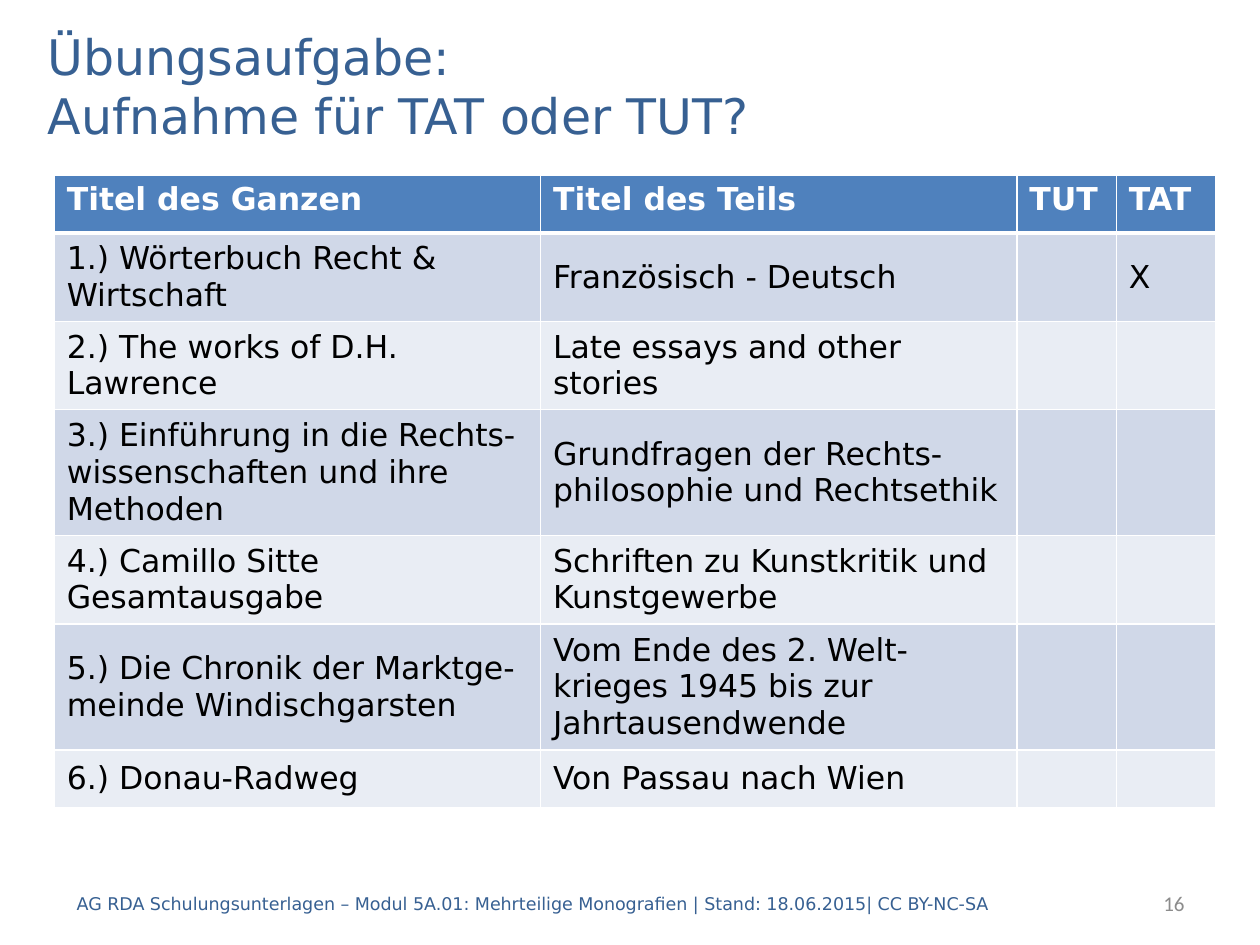
from lxml.etree import SubElement
from pptx import Presentation
from pptx.dml.color import RGBColor
from pptx.enum.text import MSO_ANCHOR, PP_ALIGN
from pptx.oxml.ns import qn
from pptx.util import Inches, Pt

FONT = "DejaVu Sans"
COLORS = {
    "title": "376092", "number": "8C8C8C", "header": "4F81BD", "odd": "D0D8E8",
    "even": "E9EDF4", "text": "000000", "white": "FFFFFF",
}
TITLE = ["Übungsaufgabe:", "Aufnahme für TAT oder TUT?"]
ROWS = [
    ("Titel des Ganzen", "Titel des Teils", "TUT", "TAT"),
    ("1.) Wörterbuch Recht & Wirtschaft", "Französisch - Deutsch", "", "X"),
    ("2.) The works of D.H. Lawrence", "Late essays and other stories", "", ""),
    ("3.) Einführung in die Rechts-wissenschaften und ihre Methoden",
     "Grundfragen der Rechts-philosophie und Rechtsethik", "", ""),
    ("4.) Camillo Sitte Gesamtausgabe", "Schriften zu Kunstkritik und Kunstgewerbe", "", ""),
    ("5.) Die Chronik der Marktge-meinde Windischgarsten",
     "Vom Ende des 2. Welt-krieges 1945 bis zur Jahrtausendwende", "", ""),
    ("6.) Donau-Radweg", "Von Passau nach Wien", "", ""),
]
COL_WIDTHS = [3.86, 3.78, 0.79, 0.79]
ROW_HEIGHTS = [0.46, 0.49, 0.39, 0.47, 0.39, 0.46, 0.46]
FOOTER = ("AG RDA Schulungsunterlagen – Modul 5A.01: Mehrteilige Monografien"
          " | Stand: 18.06.2015| CC BY-NC-SA")
FOOTER_TOP, FOOTER_HEIGHT = 6.97, 0.4


def write(tf, *lines, size=18, color="text", font=FONT, bold=False,
          align=PP_ALIGN.LEFT, space=0):
    """Fill the first paragraph, with a line break between lines."""
    p = tf.paragraphs[0]
    p.alignment = align
    p.space_before = p.space_after = Pt(space)
    for i, line in enumerate(lines):
        if i:
            p.add_line_break()
        r = p.add_run()
        r.text = line
        r.font.size, r.font.name, r.font.bold = Pt(size), font, bold
        r.font.color.rgb = RGBColor.from_string(COLORS[color])


def add_text(s, left, width, text, **fmt):
    box = s.shapes.add_textbox(Inches(left), Inches(FOOTER_TOP), Inches(width),
                               Inches(FOOTER_HEIGHT))
    tf = box.text_frame
    tf.word_wrap = True
    tf.vertical_anchor = MSO_ANCHOR.MIDDLE
    write(tf, text, **fmt)


def set_borders(cell, top, bottom):
    tc_pr = cell._tc.get_or_add_tcPr()
    for side, width in (("L", 1), ("R", 1), ("T", top), ("B", bottom)):
        ln = SubElement(tc_pr, qn(f"a:ln{side}"), w=str(Pt(width)))
        fill = SubElement(ln, qn("a:solidFill"))
        SubElement(fill, qn("a:srgbClr"), val=COLORS["white"])


def add_title(s):
    title = s.shapes.title
    title.left, title.top = Inches(0.28), Inches(0.2)
    title.width, title.height = Inches(9.45), Inches(0.95)
    title.text_frame.vertical_anchor = MSO_ANCHOR.MIDDLE
    write(title.text_frame, *TITLE, size=28, color="title")


def add_exercise_table(s):
    table = s.shapes.add_table(
        len(ROWS), len(COL_WIDTHS), Inches(0.43), Inches(1.39),
        Inches(sum(COL_WIDTHS)), Inches(sum(ROW_HEIGHTS))).table
    for col, width in zip(table.columns, COL_WIDTHS):
        col.width = Inches(width)
    for i, (row, height, texts) in enumerate(zip(table.rows, ROW_HEIGHTS, ROWS)):
        row.height = Inches(height)
        head = i == 0
        fill = "header" if head else "odd" if i % 2 else "even"
        for cell, text in zip(row.cells, texts):
            set_borders(cell, top=3 if i == 1 else 1, bottom=3 if head else 1)
            cell.fill.solid()
            cell.fill.fore_color.rgb = RGBColor.from_string(COLORS[fill])
            cell.vertical_anchor = MSO_ANCHOR.TOP if head else MSO_ANCHOR.MIDDLE
            if text:
                write(cell.text_frame, text, bold=head, space=0 if head else 6,
                      color="white" if head else "text")


def main():
    prs = Presentation()
    prs.slide_width, prs.slide_height = Inches(10), Inches(7.5)
    s = prs.slides.add_slide(prs.slide_layouts[5])
    add_text(s, 0.51, 8.11, FOOTER, size=10, color="title")
    add_text(s, 7.91, 1.59, "16", size=12, color="number", font="Calibri",
             align=PP_ALIGN.RIGHT)
    add_exercise_table(s)
    add_title(s)
    prs.save("out.pptx")


if __name__ == "__main__":
    main()
